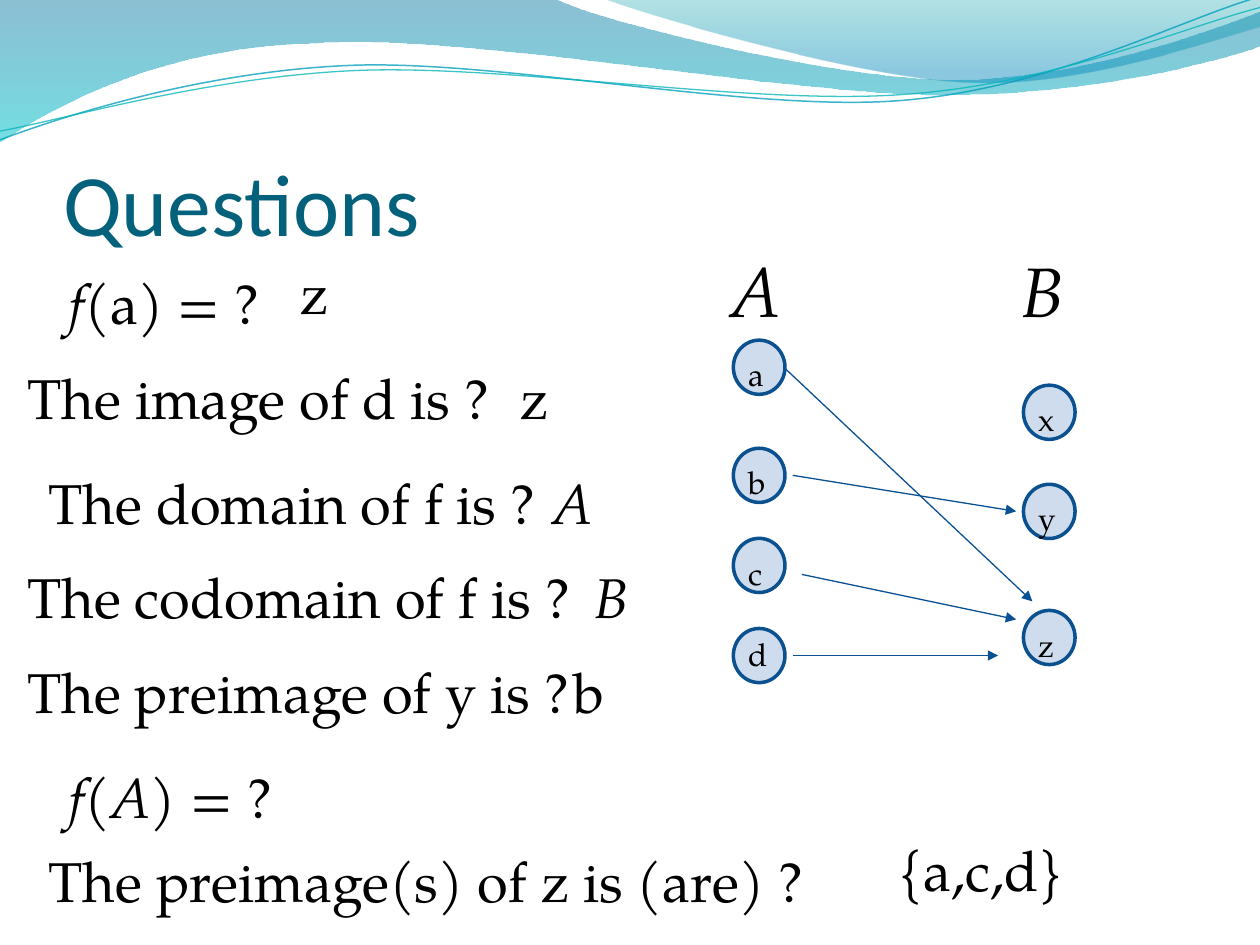
from dataclasses import dataclass

import pptx
import pptx.dml.color
import pptx.enum.dml
import pptx.enum.shapes
import pptx.enum.text
import pptx.oxml
import pptx.oxml.ns
import pptx.util

Point = tuple[float, float]
qn = pptx.oxml.ns.qn
inch = pptx.util.Inches
FONT = "TeX Gyre Pagella"
CELL = 1 / 12  # text grid: 120 columns by 90 rows
STEP = 0.0715  # mapping diagram grid
DIAGRAM = (5.82, 2.7)  # diagram origin: corner of circle a


@dataclass
class Line:
    """Text on the slide grid; asterisks enclose italics."""
    text: str
    col: float
    row: float
    cols: float


@dataclass
class Node:
    label: str
    col: float
    row: float
    drop: float = 1


@dataclass
class Wave:
    """Each segment has one point (straight) or three (cubic curve)."""
    start: Point
    segments: list[tuple[Point, ...]]
    stops: tuple = ()  # (position, colour, opacity)
    line: tuple = ()  # (colour, width, opacity)


WAVES = [
    Wave((0, 0), [((4.4, -0.01),),
                  ((4.76, 0.17), (6.64, 0.63), (7.58, 0.63)),
                  ((8.53, 0.63), (9.58, 0.26), (10, 0.09)),
                  ((10.01, 0.36),),
                  ((9.83, 0.44), (8.7, 0.76), (7.46, 0.75)),
                  ((6.22, 0.75), (3.82, 0.28), (2.57, 0.34)),
                  ((1.29, 0.36), (0.46, 0.83), (-0.01, 1.13))],
         stops=((0, "00739E", 45), (1, "00C5CE", 55))),
    Wave((4.79, -0.01), [((5.09, 0.11), (6.82, 0.62), (7.69, 0.65)),
                         ((8.56, 0.69), (9.61, 0.32), (10, 0.21)),
                         ((10, 0),)],
         stops=((0, "009FA6", 30), (0.8, "008ABE", 45))),
    Wave((0, 1.11), [((0.48, 0.93), (1.58, 0.57), (2.77, 0.52)),
                     ((3.95, 0.47), (5.93, 0.89), (7.13, 0.8)),
                     ((8.33, 0.71), (9.38, 0.15), (9.98, -0.02))],
         line=("05A0BE", 0.85, 78)),
    Wave((0, 1.04), [((0.47, 0.96), (1.64, 0.61), (2.83, 0.56)),
                     ((4.03, 0.51), (5.97, 0.84), (7.17, 0.75)),
                     ((8.36, 0.67), (9.41, 0.21), (10, 0.06))],
         line=("08B6BA", 0.75, 78)),
]
LINES = [
    Line("*f*(a) = ?", 6, 25, 51), Line("z", 28, 24, 38),
    Line("The image of d is ?", 2, 34, 51), Line("z", 49, 34, 9),
    Line("The domain of f is ?", 4, 44, 51), Line("*A*", 52, 44, 8),
    Line("The codomain of f is ?", 2, 53, 53), Line("*B*", 56, 53, 5),
    Line("The preimage of y is ?", 2, 62, 54), Line("b", 54, 62, 6),
    Line("*f*(*A*) = ?", 6, 72, 21),
    Line("{a,c,d}", 85, 79, 35),
    Line("The preimage(s) of z is (are) ?", 4, 80, 79),
]
B_COL = 32.2
NODES = [
    Node("a", 0, 0), Node("b", 0, 12), Node("c", 0, 22), Node("d", 0, 32, 0),
    Node("x", B_COL, 5), Node("y", B_COL, 16), Node("z", B_COL, 30),
]
SETS = [("*A*", -1), ("*B*", B_COL - 0.9)]
ARROWS = [((6.6, 15), (31.4, 19)), ((5.6, 3), (33.2, 29)),
          ((7.6, 26), (31.4, 31)), ((6.6, 35), (29.4, 35))]


def rgb(color: str) -> pptx.dml.color.RGBColor:
    return pptx.dml.color.RGBColor.from_string(color)


def set_opacity(shape, *percents: float) -> None:
    """Apply opacities to the shape's colours in document order."""
    for clr, pct in zip(shape._element.spPr.iter(qn("a:srgbClr")), percents):
        alpha = clr.makeelement(qn("a:alpha"), {"val": str(int(pct * 1000))})
        clr.append(alpha)


def curve_segments(sp, segments: list[tuple[Point, ...]]) -> None:
    """Merge the three straight steps of each curve into one cubic Bezier."""
    steps = iter(list(sp._element.spPr.iter(qn("a:lnTo"))))
    for segment in segments:
        group = [next(steps) for _ in segment]
        if len(group) == 3:
            bez = group[0].makeelement(qn("a:cubicBezTo"), {})
            group[0].addprevious(bez)
            for step in group:
                bez.append(step[0])
                step.getparent().remove(step)


def add_wave(s, wave: Wave) -> None:
    points = [wave.start] + [p for segment in wave.segments for p in segment]
    emu = [(inch(x), inch(y)) for x, y in points]
    builder = s.shapes.build_freeform(*emu[0])
    builder.add_line_segments(emu[1:], close=bool(wave.stops))
    sp = builder.convert_to_shape()
    curve_segments(sp, wave.segments)
    sp.shadow.inherit = False
    if wave.stops:
        sp.fill.gradient()
        sp.fill.gradient_angle = 270
        for stop, (pos, color, _) in zip(sp.fill.gradient_stops, wave.stops):
            stop.position, stop.color.rgb = pos, rgb(color)
        sp.line.fill.background()
        set_opacity(sp, *(stop[2] for stop in wave.stops))
    else:
        color, width, opacity = wave.line
        sp.fill.background()
        sp.line.color.rgb = rgb(color)
        sp.line.width = pptx.util.Pt(width)
        set_opacity(sp, opacity)


def add_run(p, text: str, size: float, color: str, font: str, italic: bool = False) -> None:
    r = p.add_run()
    r.text = text
    r.font.size, r.font.name, r.font.italic = pptx.util.Pt(size), font, italic
    r.font.color.rgb = rgb(color)


def set_margins(tf, margin: float) -> None:
    tf.margin_left = tf.margin_right = tf.margin_top = tf.margin_bottom = inch(margin)


def add_text(s, text: str, x: float, y: float, w: float, h: float, size: float) -> None:
    tf = s.shapes.add_textbox(inch(x), inch(y), inch(w), inch(h)).text_frame
    tf.word_wrap = True
    tf.auto_size = pptx.enum.text.MSO_AUTO_SIZE.SHAPE_TO_FIT_TEXT
    set_margins(tf, 0.05)
    for i, part in enumerate(text.split("*")):
        if part:
            add_run(tf.paragraphs[0], part, size, "000000", FONT, i % 2 == 1)


def on_diagram(col: float, row: float) -> Point:
    return DIAGRAM[0] + col * STEP, DIAGRAM[1] + row * STEP


def add_node(s, node: Node) -> None:
    x, y = on_diagram(node.col, node.row)
    sp = s.shapes.add_shape(pptx.enum.shapes.MSO_SHAPE.OVAL,
                            inch(x), inch(y), inch(0.41), inch(0.43))
    sp.shadow.inherit = False
    sp.fill.solid()
    sp.fill.fore_color.rgb = rgb("4F81BD")
    set_opacity(sp, 27)
    sp.line.color.rgb = rgb("0B5190")
    sp.line.width = pptx.util.Pt(2)
    add_text(s, node.label, x + STEP, y + node.drop * STEP, 0.27, 0.43, 18)


def add_arrow(s, start: Point, end: Point) -> None:
    ends = [inch(v) for point in (start, end) for v in on_diagram(*point)]
    cxn = s.shapes.add_connector(pptx.enum.shapes.MSO_CONNECTOR.STRAIGHT, *ends)
    cxn.line.color.rgb = rgb("095192")
    cxn.line.width = pptx.util.Pt(0.75)
    ln = cxn.line._get_or_add_ln()
    ln.append(ln.makeelement(qn("a:tailEnd"), {"type": "triangle"}))
    sppr = cxn._element.spPr
    sppr.append(sppr.makeelement(qn("a:effectLst"), {}))


def add_title(s, text: str) -> None:
    title = s.shapes.title
    title.left, title.top, title.width, title.height = map(inch, (0.5, 0.77, 9, 1.25))
    tf = title.text_frame
    set_margins(tf, 0)
    tf.vertical_anchor = pptx.enum.text.MSO_ANCHOR.BOTTOM
    p = tf.paragraphs[0]
    p.alignment = pptx.enum.text.PP_ALIGN.LEFT
    add_run(p, text, 50, "04617B", "Calibri")


def main() -> None:
    prs = pptx.Presentation()
    prs.slide_width, prs.slide_height = inch(10), inch(7.5)
    s = prs.slides.add_slide(prs.slide_layouts[5])
    # Header waves and title
    for wave in WAVES:
        add_wave(s, wave)
    add_title(s, "Questions")
    # Mapping from A to B
    for node in NODES:
        add_node(s, node)
    for name, col in SETS:
        add_text(s, name, *on_diagram(col, -11), 0.61, 0.84, 40)
    for start, end in ARROWS:
        add_arrow(s, start, end)
    # Questions and answers
    for q in LINES:
        add_text(s, q.text, q.col * CELL, q.row * CELL, q.cols * CELL, 0.68, 32)
    prs.save("out.pptx")


if __name__ == "__main__":
    main()
